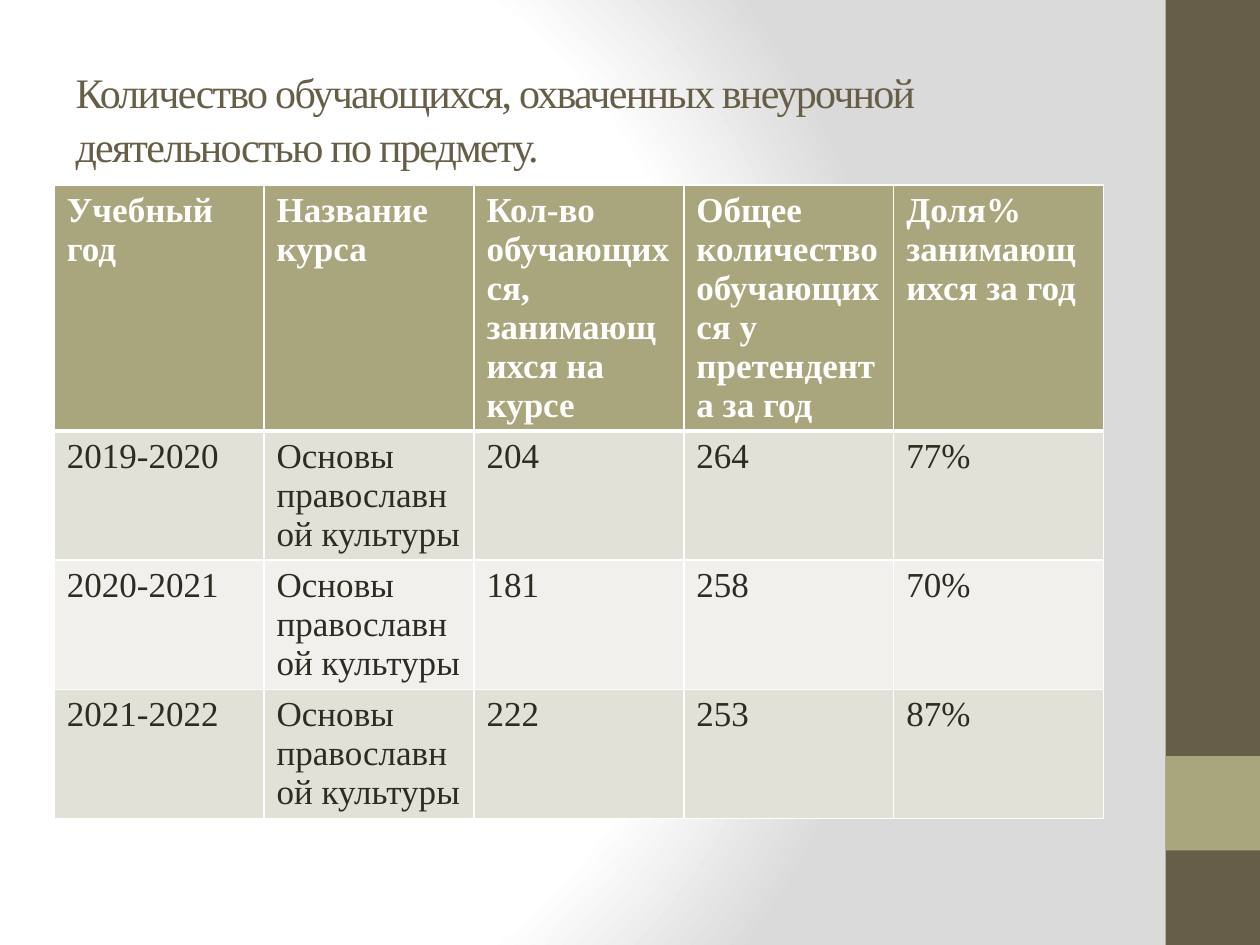
"""Build a slide with a table of pupils enrolled in after-school courses."""
from dataclasses import dataclass

from pptx import Presentation
from pptx.dml.color import RGBColor
from pptx.enum.shapes import MSO_SHAPE
from pptx.enum.text import MSO_ANCHOR, MSO_AUTO_SIZE, PP_ALIGN
from pptx.oxml import parse_xml
from pptx.oxml.ns import nsdecls
from pptx.util import Inches, Pt

WIDTH, HEIGHT = Inches(10), Inches(7.5)
FONT = "Times New Roman"
COLORS = {
    "white": "FFFFFF",
    "shade": "DADADA",
    "brown": "675E47",
    "olive": "A9A57C",
    "ink": "2F2B20",
    "dark_band": "E2E1D7",
    "light_band": "F1F0EC",
}
TITLE = "Количество обучающихся, охваченных внеурочной деятельностью по предмету."
HEADER = (
    "Учебный год",
    "Название курса",
    "Кол-во обучающихся, занимающихся на курсе",
    "Общее количество обучающихся у претендента за год",
    "Доля% занимающихся за год",
)
COURSE = "Основы православной культуры"
RECORDS = (
    ("2019-2020", COURSE, "204", "264", "77%"),
    ("2020-2021", COURSE, "181", "258", "70%"),
    ("2021-2022", COURSE, "222", "253", "87%"),
)
HEADER_HEIGHT, RECORD_HEIGHT = Inches(1.94), Inches(1.02)


@dataclass(frozen=True)
class Area:
    """A rectangle given as shares of the slide's size."""

    left: float
    top: float
    width: float
    height: float

    def lengths(self) -> tuple:
        """Return left, top, width and height as lengths."""
        return (int(self.left * WIDTH), int(self.top * HEIGHT),
                int(self.width * WIDTH), int(self.height * HEIGHT))


@dataclass(frozen=True)
class Panel:
    """A plain coloured block of the side bar."""

    area: Area
    color: str


@dataclass(frozen=True)
class RowStyle:
    """The look of one table row."""

    fill: str
    color: str
    bold: bool
    bottom_line: float


PANELS = (
    Panel(Area(0.925, 0, 0.075, 1), "brown"),
    Panel(Area(0.925, 0.8, 0.075, 0.1), "olive"),
)
TITLE_AREA = Area(0.05, 0.04, 0.833, 1 / 6)
TABLE_AREA = Area(0.043, 0.196, 0.833, 2 / 3)
HEADER_STYLE = RowStyle("olive", "white", True, 3)
BAND_STYLES = (
    RowStyle("dark_band", "ink", False, 1),
    RowStyle("light_band", "ink", False, 1),
)


def rgb(name: str) -> RGBColor:
    """Look up a named colour."""
    return RGBColor.from_string(COLORS[name])


def apply(target, formats: dict) -> None:
    """Set every attribute listed in a dict of format values."""
    for name, value in formats.items():
        setattr(target, name, value)


def write(box, text: str, color: str, size: float, bold: bool = False):
    """Put one formatted run into a text frame and return its paragraph and run."""
    para = box.paragraphs[0]
    span = para.add_run()
    span.text = text
    apply(span.font, {"name": FONT, "size": Pt(size), "bold": bold})
    span.font.color.rgb = rgb(color)
    return para, span


def paint_background(page) -> None:
    """Give the page its radial gradient."""
    stops = "".join(
        f'<a:gs pos="{share * 1000}"><a:srgbClr val="{COLORS[name]}"/></a:gs>'
        for share, name in ((0, "white"), (75, "white"), (100, "shade"))
    )
    solid = page.background.fill
    solid.solid()
    old_fill = page.element.find(".//{*}bgPr/{*}solidFill")
    old_fill.getparent().replace(old_fill, parse_xml(
        f'<a:gradFill {nsdecls("a")} rotWithShape="1"><a:gsLst>{stops}</a:gsLst>'
        '<a:path path="circle">'
        '<a:fillToRect l="20000" t="50000" r="100000" b="50000"/>'
        '</a:path></a:gradFill>'
    ))


def draw_panel(page, panel: Panel) -> None:
    """Draw one block of the side bar."""
    shape = page.shapes.add_shape(MSO_SHAPE.RECTANGLE, *panel.area.lengths())
    shape.shadow.inherit = False
    shape.fill.solid()
    shape.fill.fore_color.rgb = rgb(panel.color)
    shape.line.fill.background()


def draw_title(page) -> None:
    """Place and format the title placeholder."""
    title = page.shapes.title
    apply(title, dict(zip(("left", "top", "width", "height"), TITLE_AREA.lengths())))
    apply(title.text_frame, {
        "word_wrap": True,
        "auto_size": MSO_AUTO_SIZE.NONE,
        "vertical_anchor": MSO_ANCHOR.MIDDLE,
    })
    para, span = write(title.text_frame, TITLE, "brown", 24)
    apply(para, {"alignment": PP_ALIGN.LEFT, "line_spacing": 1.08})
    span.font._element.set("spc", "-100")


def draw_cell(cell, text: str, style: RowStyle) -> None:
    """Fill, label and outline one table cell."""
    cell.fill.solid()
    cell.fill.fore_color.rgb = rgb(style.fill)
    write(cell.text_frame, text, style.color, 20, style.bold)
    properties = cell._tc.get_or_add_tcPr()
    widths = {"L": 1, "R": 1, "T": 1, "B": style.bottom_line}
    for index, (side, width) in enumerate(widths.items()):
        properties.insert(index, parse_xml(
            f'<a:ln{side} {nsdecls("a")} w="{Pt(width)}"><a:solidFill>'
            f'<a:srgbClr val="{COLORS["white"]}"/></a:solidFill></a:ln{side}>'
        ))


def draw_table(page) -> None:
    """Draw the header and the banded records."""
    rows = (HEADER, *RECORDS)
    table = page.shapes.add_table(
        len(rows), len(HEADER), *TABLE_AREA.lengths()).table
    for index, texts in enumerate(rows):
        style = BAND_STYLES[(index - 1) % 2] if index else HEADER_STYLE
        table.rows[index].height = RECORD_HEIGHT if index else HEADER_HEIGHT
        for cell, text in zip(table.rows[index].cells, texts):
            draw_cell(cell, text, style)
        if index == 1:
            for cell in table.rows[index].cells:
                cell._tc.tcPr.find("{*}lnT").set("w", str(Pt(3)))


def main() -> None:
    """Build and save the deck."""
    deck = Presentation()
    apply(deck, {"slide_width": WIDTH, "slide_height": HEIGHT})
    page = deck.slides.add_slide(deck.slide_layouts[5])
    paint_background(page)
    for panel in PANELS:
        draw_panel(page, panel)
    draw_title(page)
    draw_table(page)
    deck.save("out.pptx")


if __name__ == "__main__":
    main()
